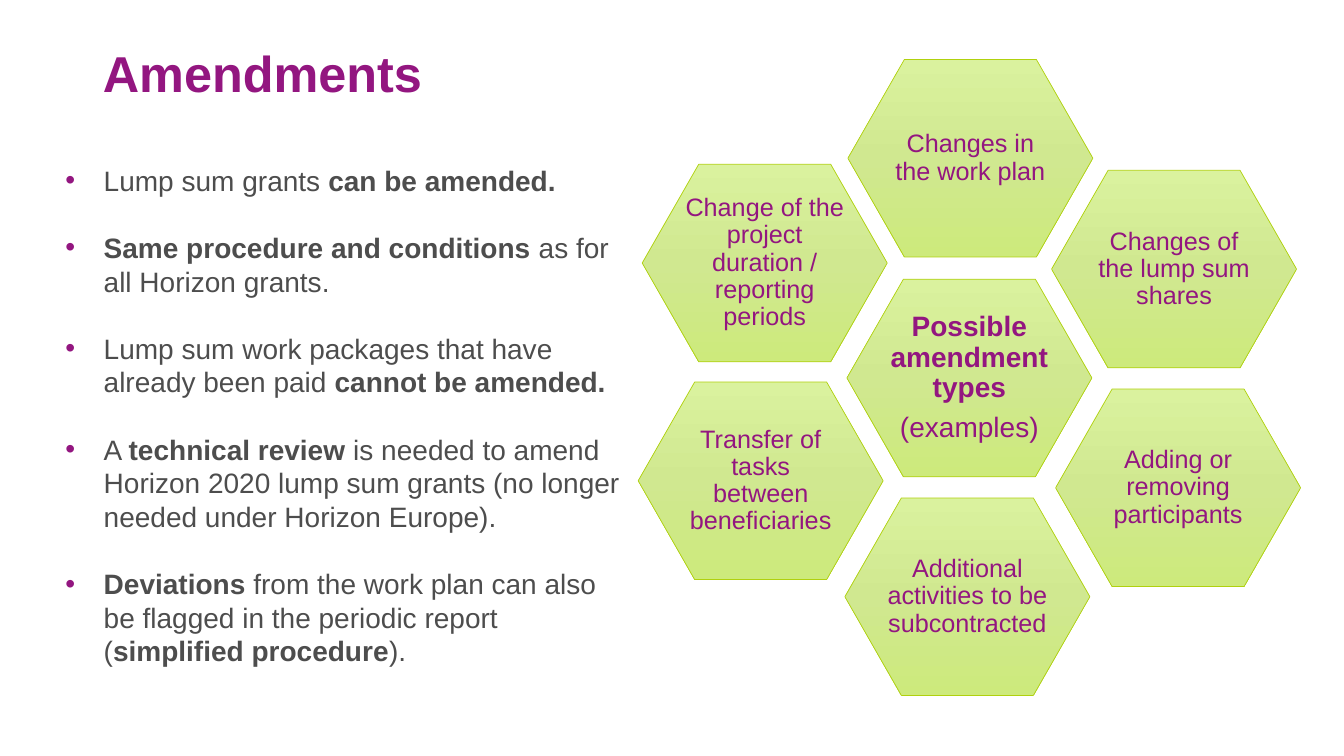
import copy

import lxml.etree
import pptx
import pptx.dml.color
import pptx.enum.shapes
import pptx.enum.text
import pptx.oxml.ns
import pptx.util

Inches = pptx.util.Inches
Pt = pptx.util.Pt
RGB = pptx.dml.color.RGBColor
Align = pptx.enum.text.PP_ALIGN
Anchor = pptx.enum.text.MSO_ANCHOR
qn = pptx.oxml.ns.qn

PLUM = RGB(0x93, 0x16, 0x80)
GREY = RGB(0x4D, 0x4D, 0x4D)
EDGE = RGB(0xB0, 0xD1, 0x0E)
SHADES = [
    (0, RGB(0xDA, 0xF2, 0x9E)),
    (0.5, RGB(0xD0, 0xE8, 0x90)),
    (1, RGB(0xCD, 0xEA, 0x7C)),
]
FONT = "Arial"

# Words between ** marks are bold.
POINTS = [
    "Lump sum grants **can be amended.**",
    "**Same procedure and conditions **as for all Horizon grants.",
    "Lump sum work packages that have already been paid **cannot be amended.**",
    "A **technical review **is needed to amend Horizon 2020 lump sum grants "
    "(no longer needed under Horizon Europe).",
    "**Deviations** from the work plan can also be flagged in the periodic "
    "report (**simplified procedure**).",
]
CELLS = [
    (8.41, 0.59, "Changes in the work plan"),
    (10.43, 1.69, "Changes of the lump sum shares"),
    (10.47, 3.86, "Adding or removing participants"),
    (8.38, 4.94, "Additional activities to be subcontracted"),
    (6.33, 3.79, "Transfer of tasks between beneficiaries"),
    (6.37, 1.63, "Change of the project duration / reporting periods"),
]


def write(para, text, size, color):
    """Fill a paragraph, with bold runs between ** marks."""
    for i, part in enumerate(text.split("**")):
        if part:
            run = para.add_run()
            run.text = part
            run.font.name = FONT
            run.font.size = Pt(size)
            run.font.color.rgb = color
            run.font.bold = i % 2 == 1


def add_title(slide, text):
    title = slide.shapes.title
    title.left, title.top = Inches(0.92), Inches(0.51)
    title.width, title.height = Inches(11.5), Inches(0.52)
    frame = title.text_frame
    frame.auto_size = pptx.enum.text.MSO_AUTO_SIZE.NONE
    frame.vertical_anchor = Anchor.BOTTOM
    frame.margin_bottom = 0
    para = frame.paragraphs[0]
    para.alignment = Align.LEFT
    para.line_spacing = 0.9
    write(para, f"**{text}**", 36, PLUM)


def add_bullet(para):
    props = para._p.get_or_add_pPr()
    props.set("marL", str(Inches(0.38)))
    props.set("indent", str(-Inches(0.38)))
    tint = lxml.etree.SubElement(props, qn("a:buClr"))
    lxml.etree.SubElement(tint, qn("a:srgbClr")).set("val", str(PLUM))
    lxml.etree.SubElement(props, qn("a:buFont")).set("typeface", FONT)
    lxml.etree.SubElement(props, qn("a:buChar")).set("char", "•")


def add_list(slide, points):
    box = slide.shapes.add_textbox(
        Inches(0.55), Inches(1.57), Inches(5.81), Inches(5.18))
    frame = box.text_frame
    frame.word_wrap = True
    for i, point in enumerate(points):
        para = frame.add_paragraph() if i else frame.paragraphs[0]
        para.space_after = Pt(24)
        add_bullet(para)
        write(para, point, 20, GREY)


def shade(shape):
    """Give a shape the three-stop green gradient, top to bottom."""
    fill = shape.fill
    fill.gradient()
    fill.gradient_angle = 270
    first = shape.element.spPr.find(".//" + qn("a:gs"))
    first.addnext(copy.deepcopy(first))
    for stop, (place, color) in zip(fill.gradient_stops, SHADES):
        stop.position = place
        stop.color.rgb = color


def add_cell(slide, left, top, lines, size):
    cell = slide.shapes.add_shape(
        pptx.enum.shapes.MSO_SHAPE.HEXAGON,
        Inches(left), Inches(top), Inches(2.43), Inches(1.96))
    cell.adjustments[0] = 0.286
    cell.shadow.inherit = False
    shade(cell)
    cell.line.color.rgb = EDGE
    cell.line.width = Pt(0.5)
    frame = cell.text_frame
    frame.word_wrap = True
    frame.vertical_anchor = Anchor.MIDDLE
    frame.margin_left = frame.margin_right = Inches(0.03)
    frame.margin_top = frame.margin_bottom = Inches(0.03)
    for i, line in enumerate(lines):
        para = frame.add_paragraph() if i else frame.paragraphs[0]
        para.alignment = Align.CENTER
        para.line_spacing = 0.9
        para.space_after = Pt(0.35 * size)
        write(para, line, size, PLUM)


def main():
    deck = pptx.Presentation()
    deck.slide_width, deck.slide_height = Inches(13.33), Inches(7.5)
    slide = deck.slides.add_slide(deck.slide_layouts[5])
    add_list(slide, POINTS)
    add_title(slide, "Amendments")
    add_cell(slide, 8.4, 2.77,
             ["**Possible amendment types**", "(examples)"], 20)
    for left, top, text in CELLS:
        add_cell(slide, left, top, [text], 18)
    deck.save("out.pptx")


if __name__ == "__main__":
    main()
